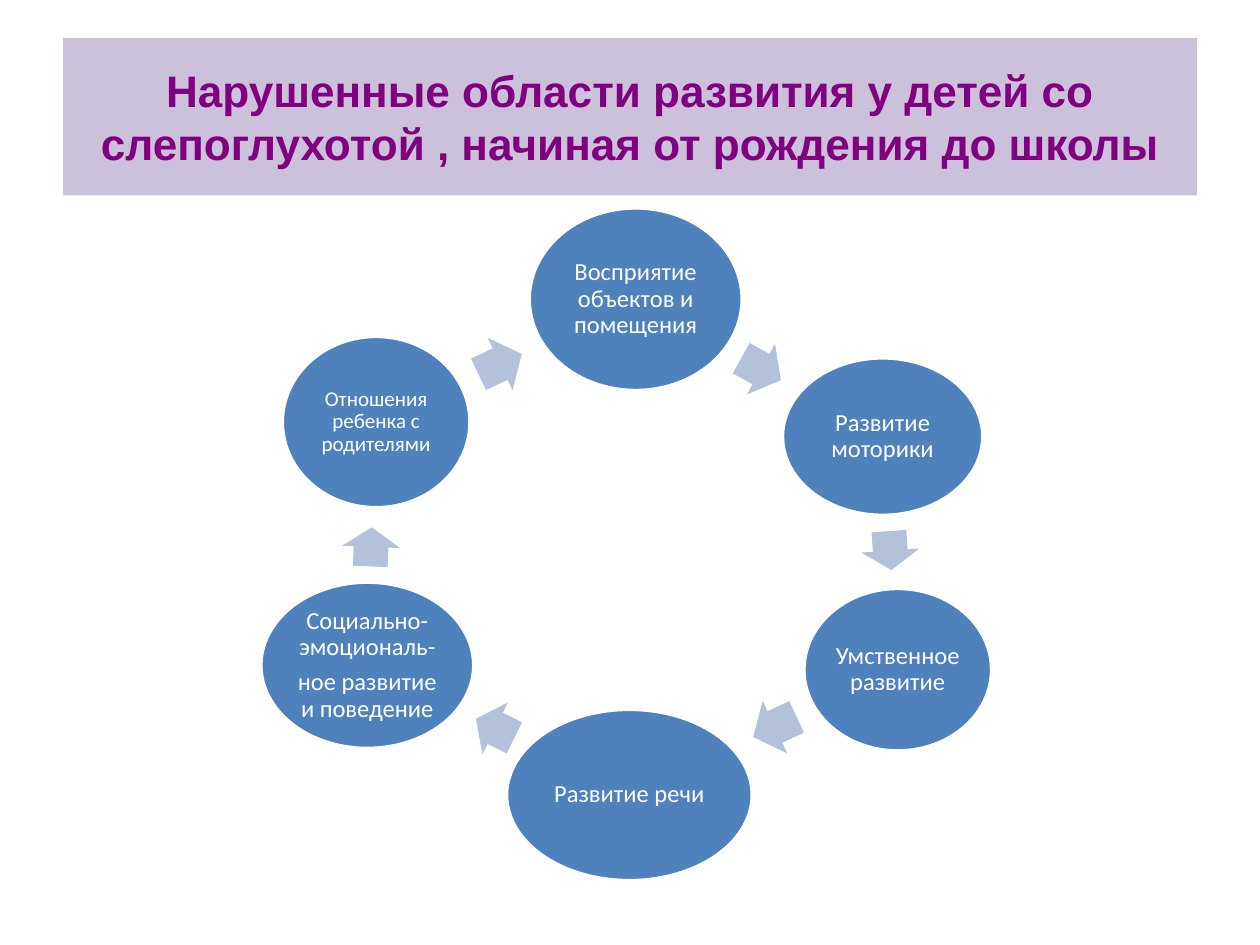
from dataclasses import dataclass

from pptx import Presentation
from pptx.dml.color import RGBColor
from pptx.enum.shapes import MSO_SHAPE
from pptx.enum.text import MSO_ANCHOR, MSO_AUTO_SIZE, PP_ALIGN
from pptx.slide import Slide
from pptx.util import Inches, Pt

COLOURS = {
    "banner": "CCC1DA",
    "heading": "800080",
    "stage": "4F81BD",
    "arrow": "B3C1DB",
    "white": "FFFFFF",
}

STAGES = [
    ((4.2, 1.65, 1.69, 1.45), 14, ["Восприятие объектов и помещения"]),
    ((6.21, 2.84, 1.59, 1.25), 14, ["Развитие моторики"]),
    ((6.38, 4.67, 1.49, 1.29), 14, ["Умственное развитие"]),
    ((4.02, 5.63, 1.95, 1.36), 14, ["Развитие речи"]),
    ((2.07, 4.62, 1.69, 1.32), 14, ["Социально-эмоциональ-", "ное развитие и поведение"]),
    ((2.24, 2.67, 1.49, 1.36), 12, ["Отношения ребенка с родителями"]),
]

ARROWS = [
    ((5.86, 2.7, 0.36, 0.46), 29),
    ((6.91, 4.14, 0.31, 0.46), 86.1),
    ((5.96, 5.54, 0.38, 0.46), 155),
    ((3.76, 5.55, 0.34, 0.46), 206.1),
    ((2.79, 4.11, 0.31, 0.46), 272.3),
    ((3.78, 2.66, 0.38, 0.46), 334.6),
]


@dataclass
class CyclePage:
    """Draws the parts of a cycle diagram on one slide in one style."""

    page: Slide
    heading_font: str = "Arial"
    stage_font: str = "Calibri"
    inset: float = 0.02

    def colour(self, name):
        return RGBColor.from_string(COLOURS[name])

    def paint(self, shape, name):
        shape.fill.solid()
        shape.fill.fore_color.rgb = self.colour(name)

    def add_span(self, para, text, font, size, colour, bold=False):
        para.alignment = PP_ALIGN.CENTER
        span = para.add_run()
        span.text = text
        span.font.name = font
        span.font.size = Pt(size)
        span.font.bold = bold
        span.font.color.rgb = self.colour(colour)

    def title(self, place, text):
        box = self.page.shapes.title
        box.left, box.top, box.width, box.height = map(Inches, place)
        self.paint(box, "banner")
        frame = box.text_frame
        frame.auto_size = MSO_AUTO_SIZE.NONE
        frame.vertical_anchor = MSO_ANCHOR.MIDDLE
        self.add_span(frame.paragraphs[0], text, self.heading_font, 25.2, "heading", True)

    def preset(self, kind, place, colour):
        shape = self.page.shapes.add_shape(kind, *map(Inches, place))
        shape.shadow.inherit = False
        self.paint(shape, colour)
        return shape

    def stage(self, place, size, lines):
        oval = self.preset(MSO_SHAPE.OVAL, place, "stage")
        oval.line.color.rgb = self.colour("white")
        oval.line.width = Pt(2)
        frame = oval.text_frame
        frame.word_wrap = True
        frame.vertical_anchor = MSO_ANCHOR.MIDDLE
        frame.margin_left = frame.margin_right = Inches(self.inset)
        frame.margin_top = frame.margin_bottom = Inches(self.inset)
        for index, line in enumerate(lines):
            para = frame.add_paragraph() if index else frame.paragraphs[0]
            para.line_spacing = 0.9
            para.space_after = Pt(size * 0.35)
            self.add_span(para, line, self.stage_font, size, "white")

    def arrow(self, place, angle):
        arrow = self.preset(MSO_SHAPE.RIGHT_ARROW, place, "arrow")
        arrow.line.fill.background()
        arrow.adjustments[0] = 0.6
        arrow.adjustments[1] = 0.5
        arrow.rotation = angle


def main():
    deck = Presentation()
    deck.slide_width, deck.slide_height = Inches(10), Inches(7.5)
    cycle = CyclePage(deck.slides.add_slide(deck.slide_layouts[5]))
    cycle.title(
        (0.5, 0.3, 9, 1.25),
        "Нарушенные области развития у детей со слепоглухотой , начиная от рождения до школы",
    )
    for stage, arrow in zip(STAGES, ARROWS):
        cycle.stage(*stage)
        cycle.arrow(*arrow)
    deck.save("out.pptx")


if __name__ == "__main__":
    main()
